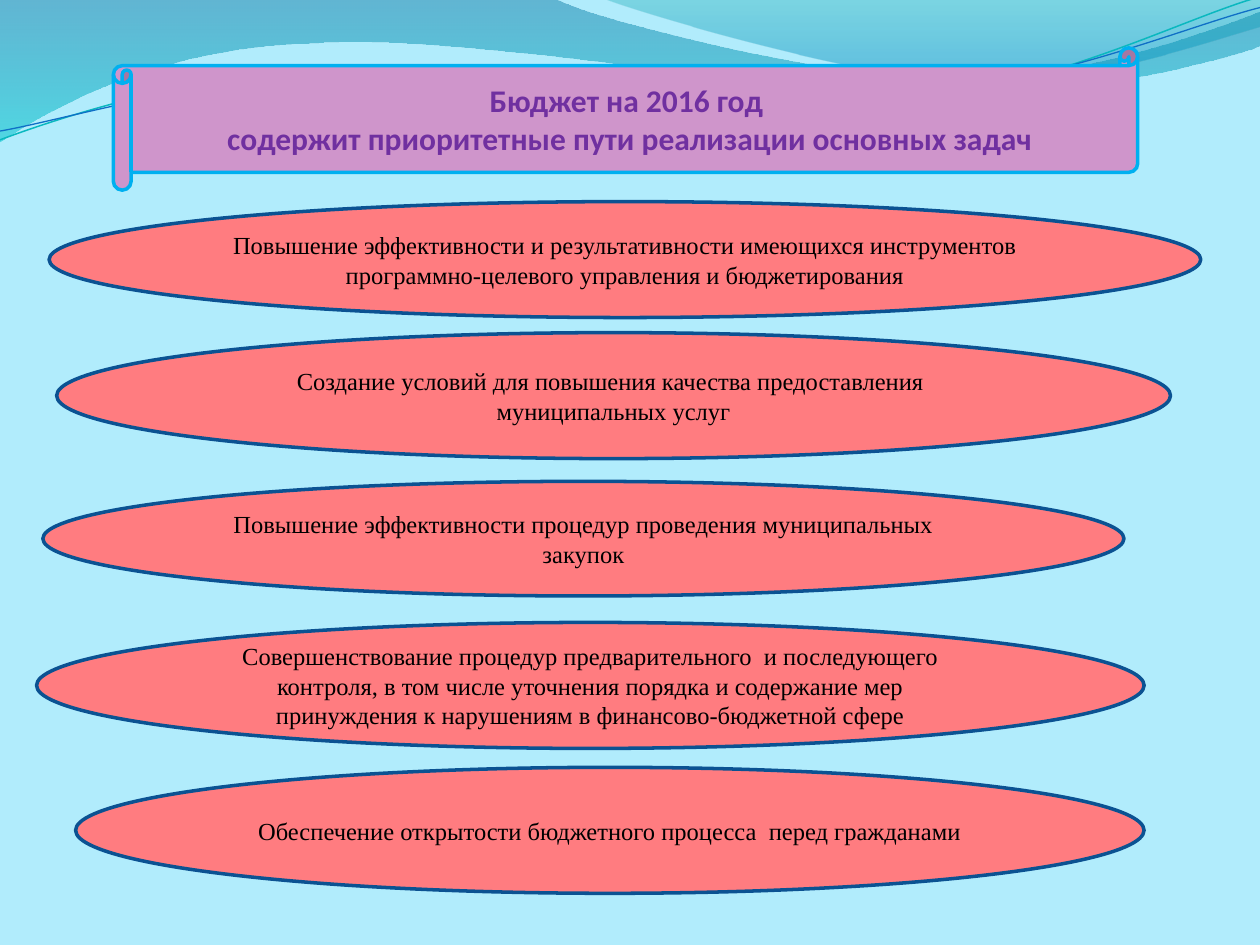
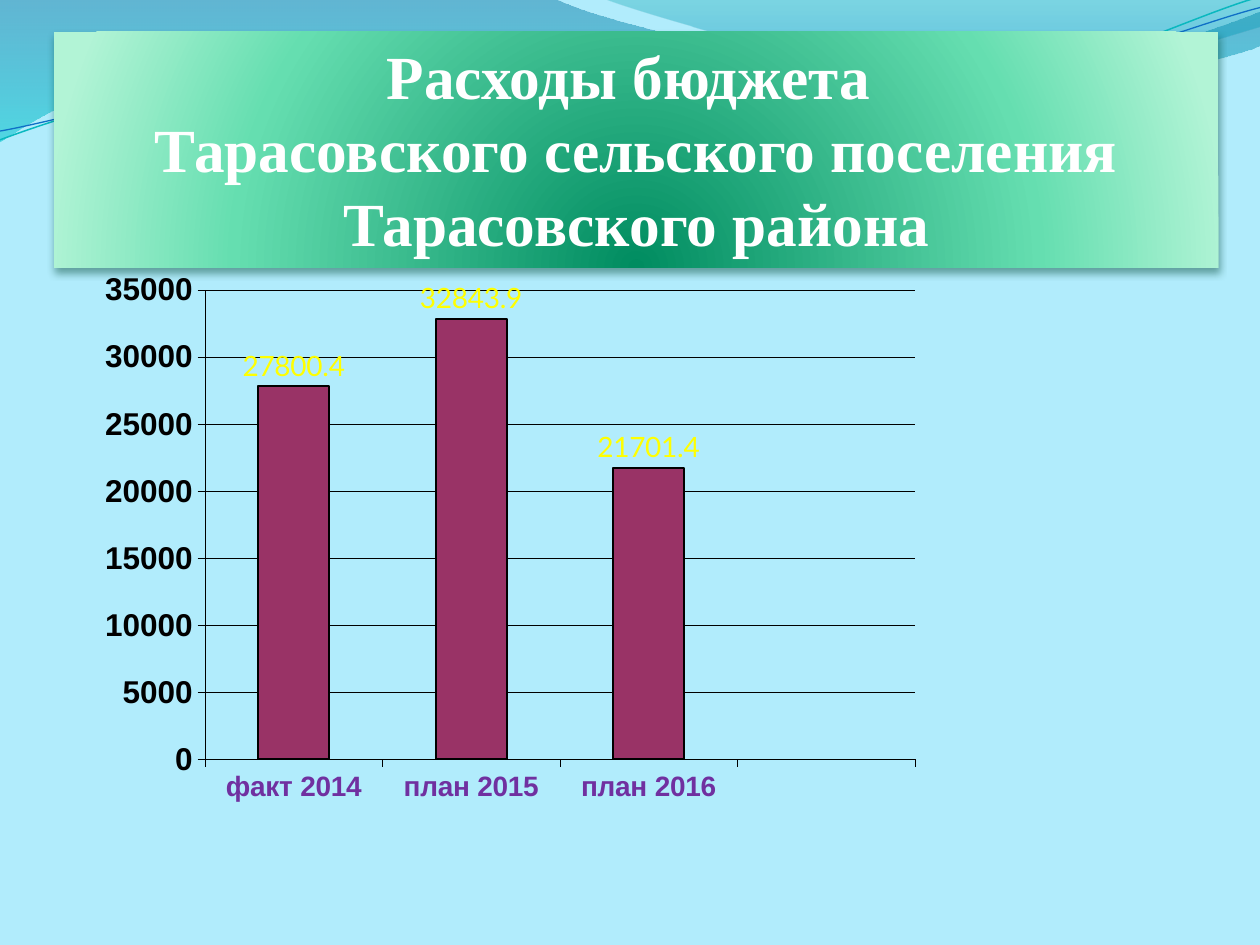
import math
from lxml import etree
from pptx import Presentation
from pptx import util as u
from pptx.chart import data as chart_data
from pptx.dml.color import RGBColor
from pptx.enum import chart as ch, shapes, text
from pptx.oxml import parse_xml
from pptx.oxml.ns import nsdecls, qn

COLORS = {
    "sky": "B1ECFC", "teal_line": "0AB8BF", "blue_line": "0F6FC6",
    "scroll": "CF95CB", "scroll_edge": "00B0F0", "violet": "7030A0",
    "task": "FF7C80", "task_edge": "0B5292", "black": "000000",
    "white": "FFFFFF", "yellow": "FFFF00", "bar": "993366",
    "shadow": "044A37",
}
RGB = {name: RGBColor.from_string(value) for name, value in COLORS.items()}
DOWN = '<a:lin ang="5400000" scaled="0"/>'
FROM_BELOW = ('<a:path path="circle"><a:fillToRect l="50000" t="130000" '
              'r="50000" b="-30000"/></a:path>')


def fill_gradient(shape, stops, direction):
    """Fill with (position %, colour, opacity %) stops."""
    shape.fill.background()
    stop_xml = "".join(
        f'<a:gs pos="{pos * 1000}"><a:srgbClr val="{color}">'
        f'<a:alpha val="{opacity * 1000}"/></a:srgbClr></a:gs>'
        for pos, color, opacity in stops)
    gradient = parse_xml(f'<a:gradFill {nsdecls("a")} rotWithShape="1">'
                         f'<a:gsLst>{stop_xml}</a:gsLst>{direction}</a:gradFill>')
    properties = shape.element.spPr
    properties.replace(properties.find(qn("a:noFill")), gradient)


def write(shape, words, font, size, color, bold=False):
    frame = shape.text_frame
    frame.text = words
    frame.word_wrap = True
    frame.auto_size = text.MSO_AUTO_SIZE.NONE
    frame.vertical_anchor = text.MSO_ANCHOR.MIDDLE
    for paragraph in frame.paragraphs:
        paragraph.alignment = text.PP_ALIGN.CENTER
        for run in paragraph.runs:
            run.font.name = font
            run.font.size = u.Pt(size)
            run.font.bold = bold
            run.font.color.rgb = RGB[color]


prs = Presentation()
prs.slide_width, prs.slide_height = u.Inches(10), u.Inches(7.5)
CELL = prs.slide_width / 100  # the grid has 100 columns and 75 rows
master = prs.slide_master
master.background.fill.solid()
master.background.fill.fore_color.rgb = RGB["sky"]
tasks_slide = prs.slides.add_slide(prs.slide_layouts[6])
spending_slide = prs.slides.add_slide(prs.slide_layouts[5])

# Waves shared by both slides: a pair is a corner, a six is a Bézier curve
waves = [
    ([(0, 0), (44, -.1), (47.6, 1.7, 66.4, 6.3, 75.8, 6.3),
      (85.3, 6.3, 95.8, 2.6, 100, .9), (100.1, 3.6),
      (98.3, 4.4, 87, 7.6, 74.6, 7.5), (62.2, 7.5, 38.2, 2.8, 25.7, 3.4),
      (12.9, 3.6, 4.6, 8.3, -.1, 11.3), (0, 0)],
     [(0, "0074A1", 45), (100, "00C6CF", 55)], None, 0),
    ([(47.9, -.1), (50.9, 1.1, 68.2, 6.2, 76.9, 6.5),
      (85.6, 6.9, 96.1, 3.2, 100, 2.1), (100, 0), (47.9, -.1)],
     [(0, "00A1A9", 30), (80, "008BBF", 45)], None, 0),
    ([(0, 11.1), (4.8, 9.3, 15.8, 5.7, 27.7, 5.2),
      (39.5, 4.7, 59.3, 8.9, 71.3, 8), (83.3, 7.1, 93.8, 1.5, 99.8, -.2)],
     None, "teal_line", .85),
    ([(0, 10.4), (4.7, 9.6, 16.4, 6.1, 28.3, 5.6),
      (40.3, 5.1, 59.7, 8.4, 71.7, 7.5), (83.6, 6.7, 94.1, 2.1, 100, .6)],
     None, "blue_line", .75),
]
LINE_TILT = 2.7  # degrees by which the two thin lines are turned back
PIVOT_X, PIVOT_Y = 49.9, 5.8
for order, (outline, stops, line_color, line_width) in enumerate(waves):
    tilt = 0 if stops else LINE_TILT
    sin, cos = math.sin(math.radians(tilt)), math.cos(math.radians(tilt))
    points = []
    for segment in outline:
        for x, y in zip(segment[::2], segment[1::2]):
            dx, dy = x - PIVOT_X, y - PIVOT_Y
            points.append((round((PIVOT_X + dx * cos - dy * sin) * CELL),
                           round((PIVOT_Y + dx * sin + dy * cos) * CELL)))
    builder = tasks_slide.shapes.build_freeform(*points[0])
    builder.add_line_segments(points[1:], close=stops is not None)
    wave = builder.convert_to_shape()
    sides = iter(wave.element.findall(".//" + qn("a:lnTo")))
    for segment in outline[1:]:
        side = next(sides)
        if len(segment) == 6:
            side.tag = qn("a:cubicBezTo")
            for _ in range(2):
                extra = next(sides)
                side.append(extra[0])
                extra.getparent().remove(extra)
    wave.rotation = -tilt
    wave.shadow.inherit = False
    if stops:
        fill_gradient(wave, stops, DOWN)
        wave.line.fill.background()
    else:
        wave.fill.background()
        wave.line.color.rgb = RGB[line_color]
        wave.line.width = u.Pt(line_width)
    wave.element.nvSpPr.cNvPr.set("id", str(20 + order))
    master.shapes.element.insert(2 + order, wave.element)

# Slide 1: heading scroll and budget tasks
scroll = tasks_slide.shapes.add_shape(
    shapes.MSO_SHAPE.HORIZONTAL_SCROLL,
    *(round(v * CELL) for v in (9, 3.8, 81.3, 11.3)))
scroll.shadow.inherit = False
scroll.fill.solid()
scroll.fill.fore_color.rgb = RGB["scroll"]
scroll.line.color.rgb = RGB["scroll_edge"]
scroll.line.width = u.Pt(2)
write(scroll, "Бюджет на 2016 год \n"
      "содержит приоритетные пути реализации основных задач",
      "Calibri", 18, "violet", bold=True)

tasks = [
    ((3.9, 16, 91.4, 9.2), "Повышение эффективности и результативности имеющихся "
     "инструментов программно-целевого управления и бюджетирования"),
    ((4.5, 26.4, 88.4, 10), "Создание условий для повышения качества "
     "предоставления  муниципальных услуг"),
    ((3.4, 38.2, 85.8, 9.1), "Повышение эффективности процедур проведения "
     "муниципальных закупок"),
    ((2.9, 49.4, 87.9, 10), "Совершенствование процедур предварительного  и "
     "последующего контроля, в том числе уточнения порядка и содержание мер "
     "принуждения к нарушениям в финансово-бюджетной сфере"),
    ((6, 60.9, 84.8, 10), "Обеспечение открытости бюджетного процесса  "
     "перед гражданами"),
]
for box, words in tasks:
    task = tasks_slide.shapes.add_shape(shapes.MSO_SHAPE.OVAL,
                                        *(round(v * CELL) for v in box))
    task.shadow.inherit = False
    task.fill.solid()
    task.fill.fore_color.rgb = RGB["task"]
    task.line.color.rgb = RGB["task_edge"]
    task.line.width = u.Pt(2)
    write(task, words, "Times New Roman", 14, "black")

# Slide 2: title banner
banner = spending_slide.shapes.title
banner.left, banner.top, banner.width, banner.height = (
    round(v * CELL) for v in (4.3, 2.5, 92.4, 18.7))
write(banner, "Расходы бюджета \n"
      "Тарасовского сельского поселения Тарасовского района",
      "Times New Roman", 35, "white", bold=True)
banner.text_frame.vertical_anchor = text.MSO_ANCHOR.TOP
banner.shadow.inherit = False
fill_gradient(banner, [(0, "008C60", 100), (68, "65DEB0", 100),
                       (100, "B2F4D6", 100)], FROM_BELOW)
banner.element.spPr.find(qn("a:effectLst")).append(parse_xml(
    f'<a:outerShdw {nsdecls("a")} blurRad="{u.Pt(4.5)}" dist="{u.Pt(3)}" '
    f'dir="5400000" rotWithShape="0"><a:srgbClr val="{COLORS["shadow"]}">'
    '<a:alpha val="48000"/></a:srgbClr></a:outerShdw>'))

# Slide 2: spending by year
spending = chart_data.CategoryChartData()
spending.categories = ["факт 2014", "план 2015", "план 2016", ""]
spending.add_series("Series 1", (27800.4, 32843.9, 21701.4, None))
chart = spending_slide.shapes.add_chart(
    ch.XL_CHART_TYPE.COLUMN_CLUSTERED,
    *(round(v * CELL) for v in (5.9, 21.5, 88.7, 48.4)), spending).chart
chart.has_title = chart.has_legend = False
chart.font.name, chart.font.size, chart.font.bold = "Arial", u.Pt(18), True
chart.font.color.rgb = RGB["black"]

years, amounts = chart.category_axis, chart.value_axis
years.tick_label_position = ch.XL_TICK_LABEL_POSITION.LOW
amounts.has_major_gridlines = True
for axis, size, color in ((years, 16, "violet"), (amounts, 18, "black")):
    axis.major_tick_mark = ch.XL_TICK_MARK.OUTSIDE
    axis.minor_tick_mark = ch.XL_TICK_MARK.NONE
    font = axis.tick_labels.font
    font.name, font.size, font.bold = "Arial", u.Pt(size), True
    font.color.rgb = RGB[color]
for line in (years.format.line, amounts.format.line,
             amounts.major_gridlines.format.line):
    line.color.rgb = RGB["black"]
    line.width = u.Pt(.25)

plot = chart.plots[0]
plot.gap_width = 150
plot.vary_by_categories = False
bars = plot.series[0]
bars.format.fill.solid()
bars.format.fill.fore_color.rgb = RGB["bar"]
bars.format.line.color.rgb = RGB["black"]
bars.format.line.width = u.Pt(1)
labels = bars.data_labels
labels.show_value = True
labels.position = ch.XL_LABEL_POSITION.OUTSIDE_END
labels.font.name, labels.font.size, labels.font.bold = "Lato", u.Pt(16), False
labels.font.color.rgb = RGB["yellow"]

plot_area = chart.element.find(".//" + qn("c:plotArea"))
for automatic in plot_area.findall(qn("c:layout")):
    plot_area.remove(automatic)
layout = etree.Element(qn("c:layout"))
manual = etree.SubElement(layout, qn("c:manualLayout"))
for tag, value in (("layoutTarget", "inner"), ("xMode", "edge"), ("yMode", "edge")):
    etree.SubElement(manual, qn("c:" + tag)).set("val", value)
for tag, percent in (("x", 11.7), ("y", 3.1), ("w", 63.5), ("h", 77)):
    etree.SubElement(manual, qn("c:" + tag)).set("val", str(percent / 100))
plot_area.insert(0, layout)

prs.save("out.pptx")
